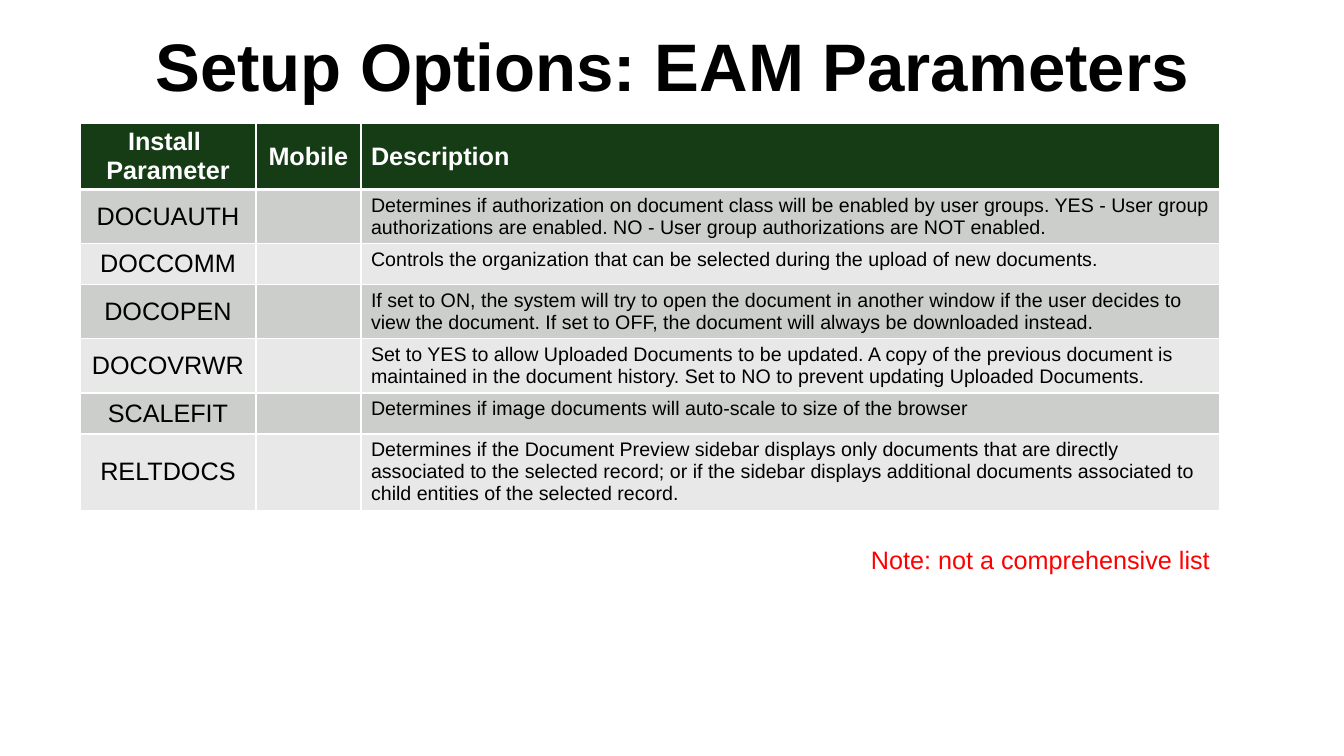
"""Build the slide on EAM setup parameters."""
import dataclasses
import typing

import lxml.etree
import pptx
import pptx.dml.color
import pptx.enum.text
import pptx.oxml.ns
import pptx.util

EMU_PER_PX = 914400 / 100.8
ALIGN = pptx.enum.text.PP_ALIGN
ANCHOR = pptx.enum.text.MSO_ANCHOR
AUTO_SIZE = pptx.enum.text.MSO_AUTO_SIZE
BLACK, WHITE, RED = "000000", "FFFFFF", "FF0000"
HEADER_FILL = "153C15"
BAND_FILLS = ("CCCECC", "E8E8E8")
COLUMN_WIDTHS = (176, 105, 859)
ROW_HEIGHT = 41
TABLE_LEFT, TABLE_TOP, TABLE_HEIGHT = 80, 123, 404


@dataclasses.dataclass(frozen=True)
class TextStyle:
    size: int
    color: str = BLACK
    bold: bool = False
    align: ALIGN = ALIGN.LEFT
    anchor: ANCHOR = ANCHOR.TOP
    line_spacing: typing.Optional[float] = None


@dataclasses.dataclass(frozen=True)
class Label:
    text: str
    left: int
    top: int
    width: int
    height: int
    style: TextStyle
    auto_size: AUTO_SIZE = AUTO_SIZE.NONE


@dataclasses.dataclass(frozen=True)
class Parameter:
    name: str
    description: str
    mobile: str = ""


HEADER = TextStyle(18, WHITE, True, ALIGN.CENTER, ANCHOR.MIDDLE)
HEADER_STYLES = (HEADER, HEADER, dataclasses.replace(HEADER, align=ALIGN.LEFT))
NAME = TextStyle(18, align=ALIGN.CENTER, anchor=ANCHOR.MIDDLE)
BODY_STYLES = (NAME, TextStyle(18), TextStyle(14))
HEADINGS = ("Install \nParameter", "Mobile", "Description")

LABELS = (
    Label("Setup Options: EAM Parameters", 124, 17, 1097, 94,
          TextStyle(48, BLACK, True, ALIGN.CENTER, ANCHOR.BOTTOM, 0.9)),
    Label("Note: not a comprehensive list", 861, 539, 375, 40,
          TextStyle(18, RED), AUTO_SIZE.SHAPE_TO_FIT_TEXT),
)

PARAMETERS = (
    Parameter("DOCUAUTH", "Determines if authorization on document class will be enabled by user "
              "groups. YES - User group authorizations are enabled. NO - User group "
              "authorizations are NOT enabled."),
    Parameter("DOCCOMM", "Controls the organization that can be selected during the upload of "
              "new documents."),
    Parameter("DOCOPEN", "If set to ON, the system will try to open the document in another "
              "window if the user decides to view the document. If set to OFF, the document "
              "will always be downloaded instead."),
    Parameter("DOCOVRWR", "Set to YES to allow Uploaded Documents to be updated. A copy of the "
              "previous document is maintained in the document history. Set to NO to prevent "
              "updating Uploaded Documents."),
    Parameter("SCALEFIT", "Determines if image documents will auto-scale to size of the browser"),
    Parameter("RELTDOCS", "Determines if the Document Preview sidebar displays only documents "
              "that are directly associated to the selected record; or if the sidebar displays "
              "additional documents associated to child entities of the selected record."),
)


def px(length: int) -> pptx.util.Emu:
    """Convert pixels to EMU."""
    return pptx.util.Emu(round(length * EMU_PER_PX))


def rgb(value: str) -> pptx.dml.color.RGBColor:
    """Turn a hex string into a colour."""
    return pptx.dml.color.RGBColor.from_string(value)


def write_text(text_frame, text: str, style: TextStyle) -> None:
    """Write text, one paragraph per line, in a style."""
    text_frame.text = text
    formats = {"name": "Arial", "size": pptx.util.Pt(style.size), "bold": style.bold}
    for paragraph in text_frame.paragraphs:
        paragraph.alignment = style.align
        paragraph.line_spacing = style.line_spacing
        for target in (paragraph, *paragraph.runs):
            for attribute, value in formats.items():
                setattr(target.font, attribute, value)
            target.font.color.rgb = rgb(style.color)


def draw_label(slide, label: Label) -> None:
    """Add a text box."""
    shape = slide.shapes.add_textbox(
        px(label.left), px(label.top), px(label.width), px(label.height))
    write_text(shape.text_frame, label.text, label.style)
    formats = {"word_wrap": True, "vertical_anchor": label.style.anchor,
               "auto_size": label.auto_size}
    for attribute, value in formats.items():
        setattr(shape.text_frame, attribute, value)


def add_borders(cell, widths: dict[str, int]) -> None:
    """Give a cell white borders with point widths keyed by side."""
    qn = pptx.oxml.ns.qn
    properties = cell._tc.get_or_add_tcPr()
    for index, side in enumerate("LRTB"):
        line = lxml.etree.Element(qn(f"a:ln{side}"), w=str(pptx.util.Pt(widths[side])))
        fill = lxml.etree.SubElement(line, qn("a:solidFill"))
        lxml.etree.SubElement(fill, qn("a:srgbClr"), val=WHITE)
        properties.insert(index, line)


def draw_table(slide, parameters: tuple[Parameter, ...]) -> None:
    """Add the parameter table."""
    rows = [HEADINGS] + [(item.name, item.mobile, item.description) for item in parameters]
    shape = slide.shapes.add_table(
        len(rows), len(COLUMN_WIDTHS), px(TABLE_LEFT), px(TABLE_TOP),
        px(sum(COLUMN_WIDTHS)), px(ROW_HEIGHT * len(rows)))
    table = shape.table
    for column, width in zip(table.columns, COLUMN_WIDTHS):
        column.width = px(width)
    for row_index, texts in enumerate(rows):
        table.rows[row_index].height = px(ROW_HEIGHT)
        is_header = row_index == 0
        styles = HEADER_STYLES if is_header else BODY_STYLES
        fill = HEADER_FILL if is_header else BAND_FILLS[(row_index - 1) % 2]
        widths = {"L": 1, "R": 1, "T": 3 if row_index == 1 else 1, "B": 3 if is_header else 1}
        for column_index, (text, style) in enumerate(zip(texts, styles)):
            cell = table.cell(row_index, column_index)
            cell.fill.solid()
            cell.fill.fore_color.rgb = rgb(fill)
            cell.vertical_anchor = style.anchor
            write_text(cell.text_frame, text, style)
            add_borders(cell, widths)
    shape.height = px(TABLE_HEIGHT)


def main() -> None:
    """Build and save the presentation."""
    presentation = pptx.Presentation()
    presentation.slide_width, presentation.slide_height = px(1344), px(756)
    slide = presentation.slides.add_slide(presentation.slide_layouts[6])
    title, note = LABELS
    draw_label(slide, title)
    draw_table(slide, PARAMETERS)
    draw_label(slide, note)
    presentation.save("out.pptx")


if __name__ == "__main__":
    main()
